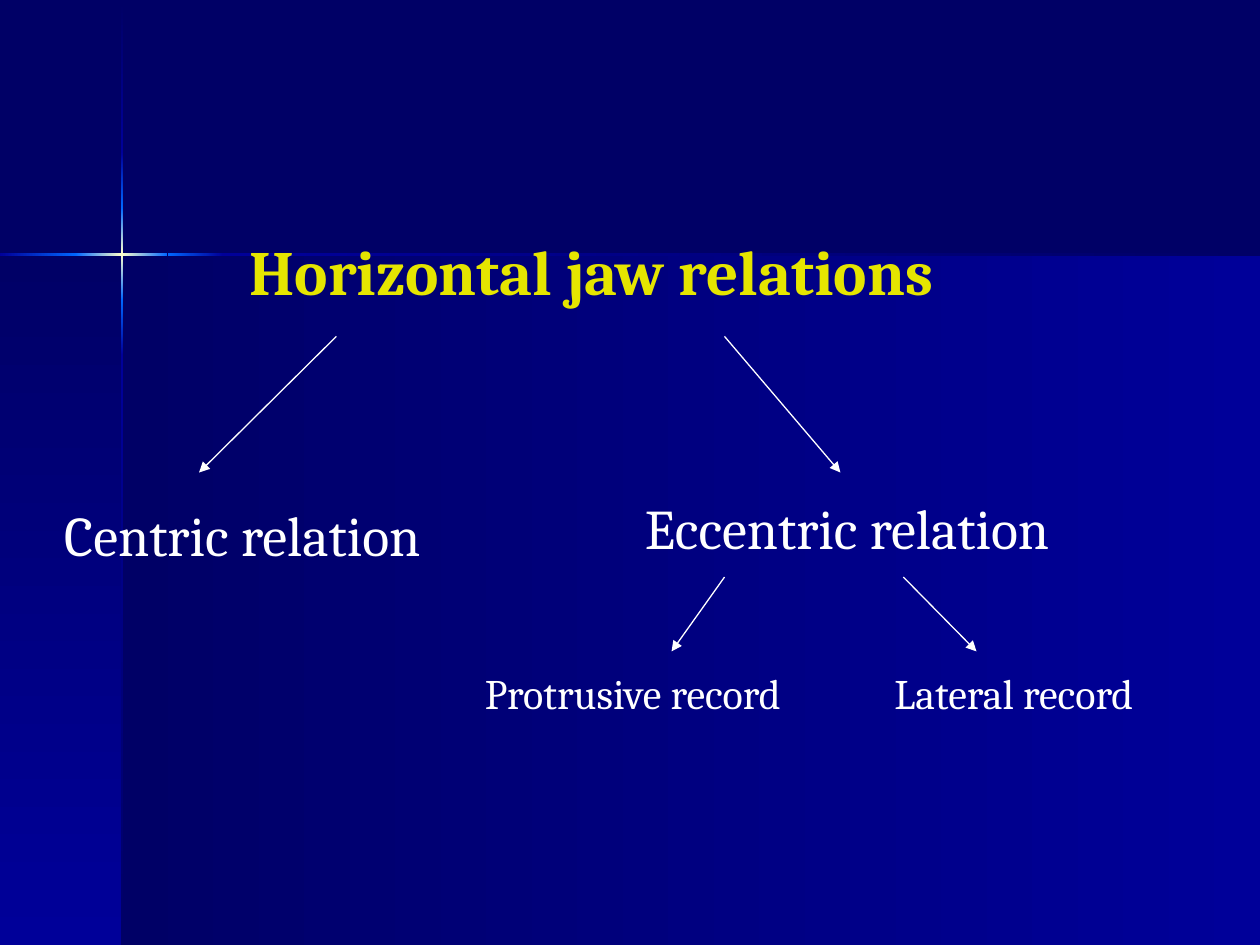
import copy

import pptx
import pptx.dml.color
import pptx.enum.shapes
import pptx.enum.text
import pptx.oxml
import pptx.oxml.ns
import pptx.util

SCALE = 9144
HUES = {
    "dark": "000066",
    "deep": "000099",
    "blue": "0066FF",
    "glow": "FFFFCC",
    "title": "E5E500",
    "text": "FFFFFF",
}
ALIGN = pptx.enum.text.PP_ALIGN


def px(*nums):
    return [pptx.util.Emu(num * SCALE) for num in nums]


def hue(name):
    return pptx.dml.color.RGBColor.from_string(HUES[name])


class Deck:
    font = "Cambria"

    def __init__(self, wide, high):
        self.prs = pptx.Presentation()
        self.prs.slide_width, self.prs.slide_height = px(wide, high)
        self.slide = self.prs.slides.add_slide(self.prs.slide_layouts[5])
        self.shapes = self.slide.shapes
        fill = self.slide.background.fill
        fill.solid()
        fill.fore_color.rgb = hue("dark")

    def panel(self, box, names, down):
        kind = pptx.enum.shapes.MSO_SHAPE.RECTANGLE
        shape = self.shapes.add_shape(kind, *px(*box))
        shape.shadow.inherit = False
        shape.line.fill.background()
        fill = shape.fill
        fill.gradient()
        fill.gradient_angle = 270 if down else 0
        stops = shape._element.spPr.find(".//" + pptx.oxml.ns.qn("a:gsLst"))
        while len(stops) < len(names):
            stops.append(copy.deepcopy(stops[-1]))
        for i, (stop, name) in enumerate(zip(fill.gradient_stops, names)):
            stop.color.rgb = hue(name)
            stop.position = i / (len(names) - 1)

    def add_text(self, frame, text, size, name, align, bold=False):
        para = frame.paragraphs[0]
        para.alignment = align
        run = para.add_run()
        run.text = text
        run.font.name = self.font
        run.font.size = pptx.util.Pt(size)
        run.font.bold = bold
        run.font.color.rgb = hue(name)

    def title(self, box, text):
        shape = self.shapes.title
        shape.left, shape.top, shape.width, shape.height = px(*box)
        self.shapes._spTree.append(shape._element)
        frame = shape.text_frame
        frame.vertical_anchor = pptx.enum.text.MSO_ANCHOR.MIDDLE
        self.add_text(frame, text, 36, "title", ALIGN.CENTER, True)

    def label(self, box, text, size, align):
        frame = self.shapes.add_textbox(*px(*box)).text_frame
        frame.word_wrap = False
        frame.auto_size = pptx.enum.text.MSO_AUTO_SIZE.SHAPE_TO_FIT_TEXT
        self.add_text(frame, text, size, "text", align)

    def arrow(self, *ends):
        kind = pptx.enum.shapes.MSO_CONNECTOR.STRAIGHT
        line = self.shapes.add_connector(kind, *px(*ends))
        line.line.color.rgb = hue("text")
        line.line.width = pptx.util.Pt(0.75)
        tail = pptx.oxml.parse_xml(
            f'<a:tailEnd {pptx.oxml.ns.nsdecls("a")} type="triangle"/>')
        props = line._element.spPr
        props.find(pptx.oxml.ns.qn("a:ln")).append(tail)
        props.append(props.makeelement(pptx.oxml.ns.qn("a:effectLst"), {}))


def main():
    deck = Deck(1000, 750)
    deck.panel((97, 202, 903, 548), ("dark", "deep"), False)
    deck.panel((0, 202, 97, 548), ("dark", "deep"), True)

    fade = ("dark", "deep")
    rise = ("deep", "blue")
    star = ("blue", "glow", "blue")
    beams = [
        (True, 1, 121, fade),
        (True, 282, 750, fade[::-1]),
        (False, 177, 1000, fade[::-1]),
        (True, 238, 282, rise[::-1]),
        (True, 121, 165, rise),
        (True, 165, 238, star),
        (False, 0, 61, rise),
        (False, 133, 177, rise[::-1]),
        (False, 60, 133, star),
    ]
    for down, start, end, names in beams:
        size = end - start
        box = (96, start, 2, size) if down else (start, 201, size, 2)
        deck.panel(box, names, down)

    deck.title((25, 167, 900, 95), "Horizontal jaw relations ")
    deck.label((33, 392, 319, 63), "Centric relation", 32, ALIGN.CENTER)
    deck.label((492, 387, 361, 63), "Eccentric relation", 32, ALIGN.CENTER)
    deck.label((375, 525, 274, 50), "Protrusive record", 24, ALIGN.LEFT)
    deck.label((700, 525, 226, 50), "Lateral record", 24, ALIGN.LEFT)

    for top, end, pairs in [
        (458, 517, [(575, 533), (717, 775)]),
        (267, 375, [(267, 158), (575, 667)]),
    ]:
        for start, stop in pairs:
            deck.arrow(start, top, stop, end)

    deck.prs.save("out.pptx")


if __name__ == "__main__":
    main()
